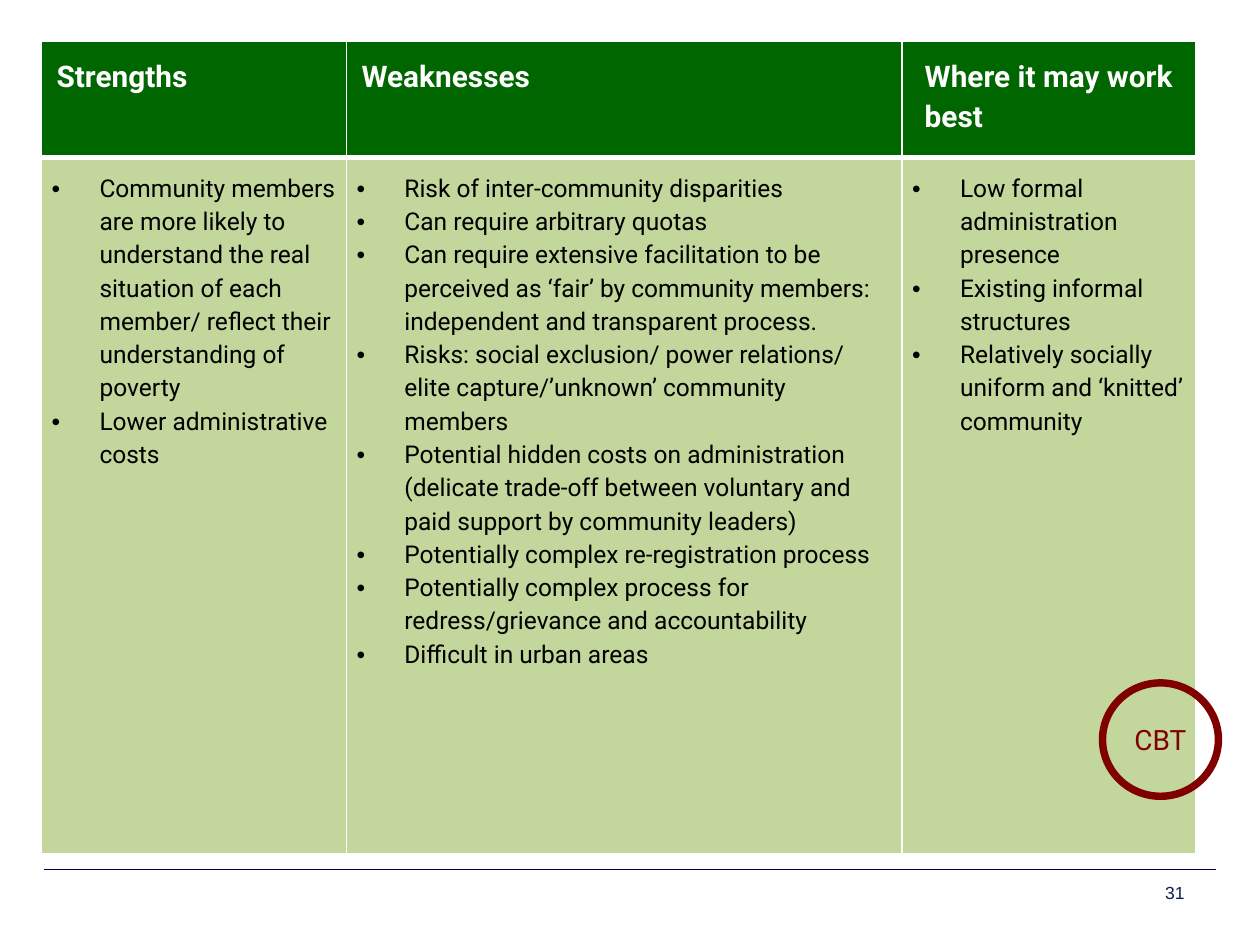
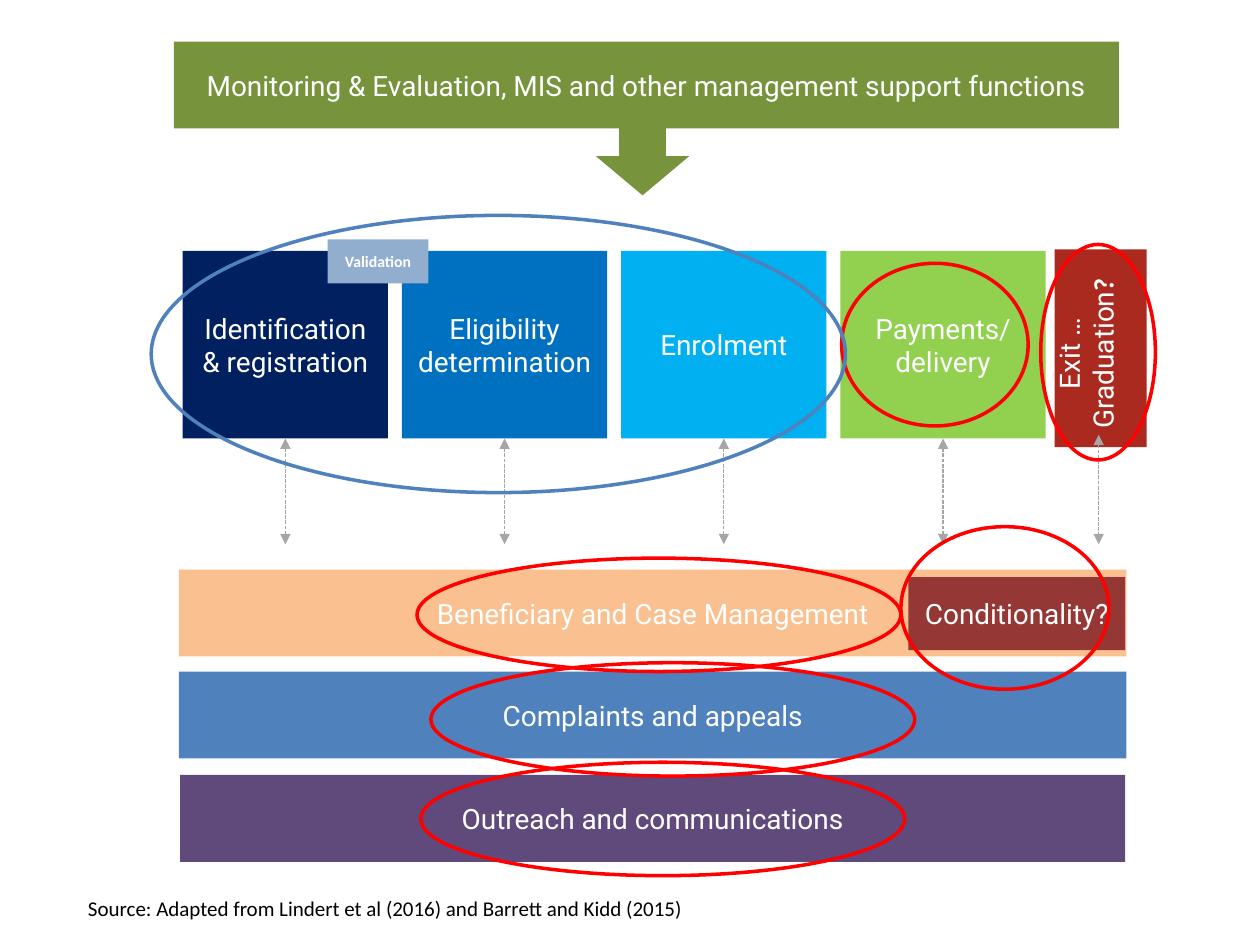
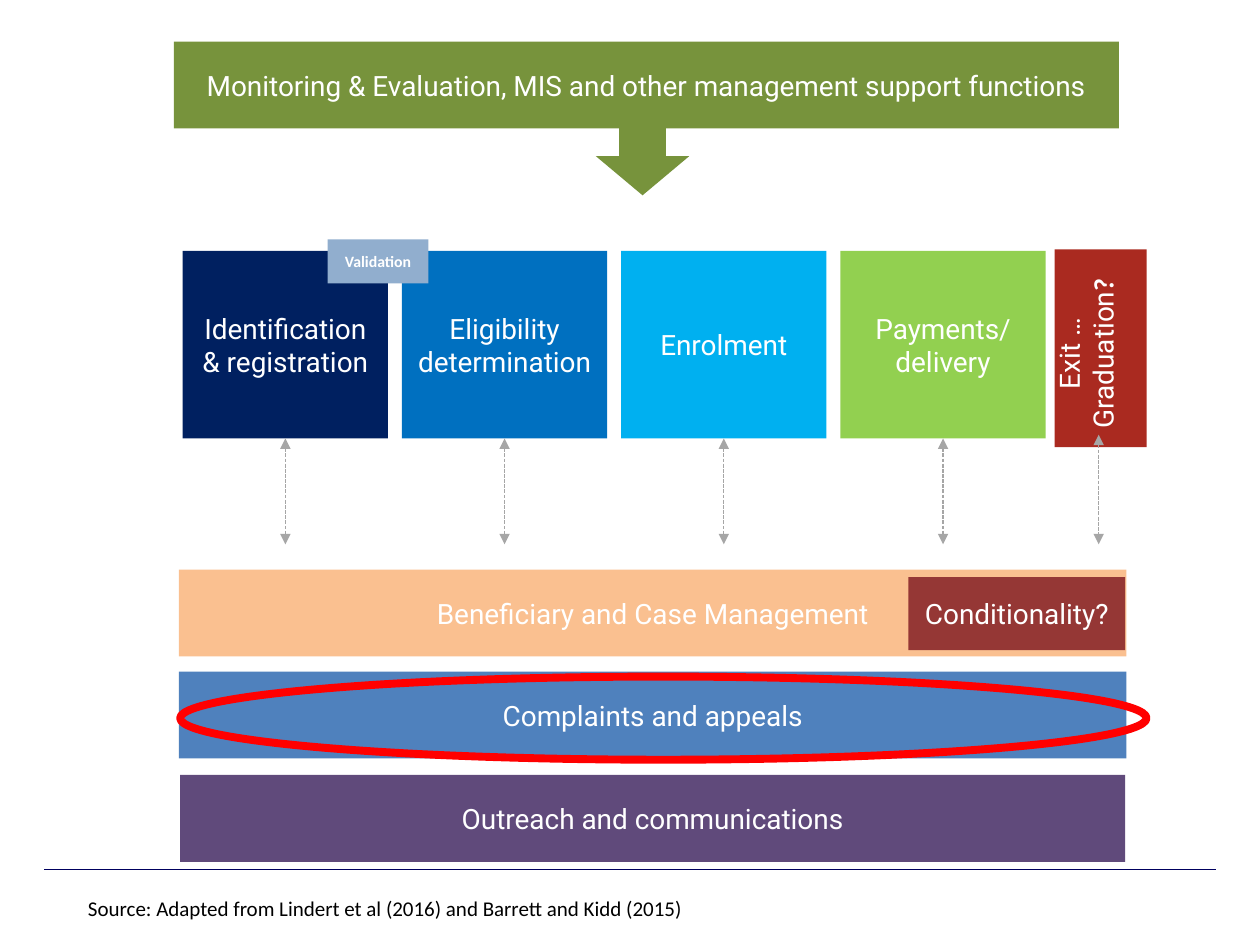
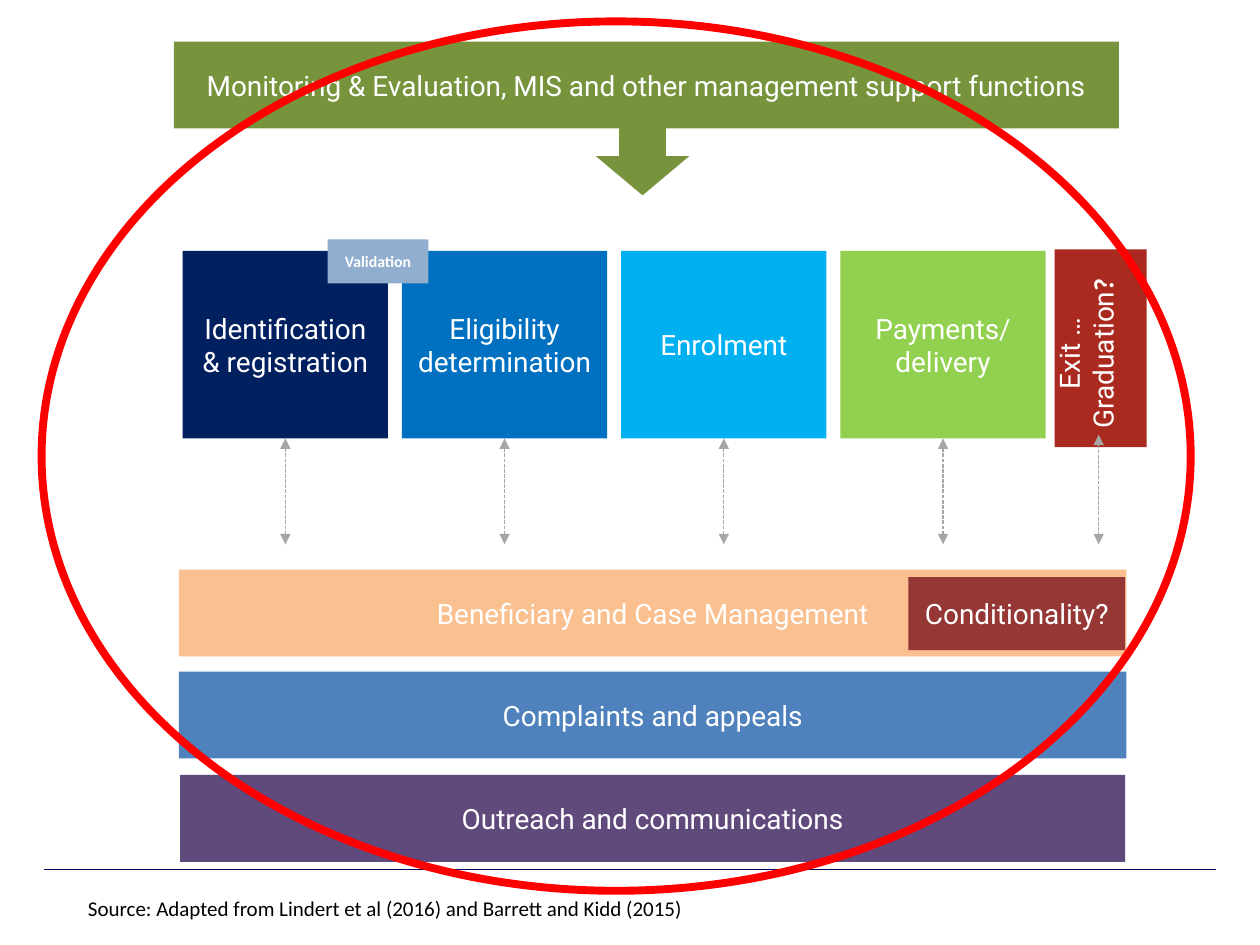
from lxml import etree
from pptx import Presentation
from pptx.dml.color import RGBColor
from pptx.enum.dml import MSO_LINE
from pptx.enum.shapes import MSO_CONNECTOR, MSO_SHAPE
from pptx.enum.text import MSO_ANCHOR, PP_ALIGN
from pptx.oxml.ns import qn
from pptx.util import Inches, Pt

RECTANGLE, ELLIPSE, DOWN_ARROW = MSO_SHAPE.RECTANGLE, MSO_SHAPE.OVAL, MSO_SHAPE.DOWN_ARROW
STRAIGHT = MSO_CONNECTOR.STRAIGHT
SYSTEM_DASH = MSO_LINE.SQUARE_DOT
TOP, MIDDLE = MSO_ANCHOR.TOP, MSO_ANCHOR.MIDDLE
LEFT, CENTER, RIGHT, JUSTIFY = PP_ALIGN.LEFT, PP_ALIGN.CENTER, PP_ALIGN.RIGHT, PP_ALIGN.JUSTIFY
BOTTOM_SIDE = 2

WHITE = RGBColor(0xFF, 0xFF, 0xFF)
BLACK = RGBColor(0x00, 0x00, 0x00)
RED = RGBColor(0xFF, 0x00, 0x00)
MAROON = RGBColor(0x80, 0x00, 0x00)
BRICK = RGBColor(0xAA, 0x2A, 0x20)
RUST = RGBColor(0x95, 0x37, 0x35)
RULE_NAVY = RGBColor(0x00, 0x00, 0x5E)
NUMBER_NAVY = RGBColor(0x0B, 0x1F, 0x51)
NAVY = RGBColor(0x00, 0x20, 0x60)
BLUE = RGBColor(0x00, 0x70, 0xC0)
SKY = RGBColor(0x00, 0xB0, 0xF0)
STEEL = RGBColor(0x4F, 0x81, 0xBD)
PALE_BLUE = RGBColor(0x91, 0xAE, 0xCE)
LIME = RGBColor(0x92, 0xD0, 0x50)
OLIVE = RGBColor(0x77, 0x93, 0x3C)
DARK_GREEN = RGBColor(0x00, 0x66, 0x00)
PALE_GREEN = RGBColor(0xC3, 0xD6, 0x9B)
PEACH = RGBColor(0xFA, 0xC0, 0x90)
PURPLE = RGBColor(0x60, 0x4A, 0x7B)
GREY = RGBColor(0xA6, 0xA6, 0xA6)

BODY_FONT, NOTE_FONT, NUMBER_FONT = "Roboto", "Calibri", "Arial"

# Column: width, header, header alignment, header indent, right and bottom inset, bullets
COLUMNS = [
    (2.42, "Strengths", JUSTIFY, 0, (0.07, 0.03), [
        "Community members are more likely to understand the real situation of each "
        "member/ reflect their understanding of poverty",
        "Lower administrative costs",
    ]),
    (4.41, "Weaknesses", JUSTIFY, 0, (0.07, 0.03), [
        "Risk of inter-community disparities",
        "Can require arbitrary quotas",
        "Can require extensive facilitation to be perceived as ‘fair’ by community "
        "members: independent and transparent process.",
        "Risks: social exclusion/ power relations/ elite capture/’unknown’ community members",
        "Potential hidden costs on administration (delicate trade-off between voluntary "
        "and paid support by community leaders)",
        "Potentially complex re-registration process",
        "Potentially complex process for redress/grievance and accountability",
        "Difficult in urban areas",
    ]),
    (2.33, "Where it may work best", LEFT, 0.06, (0, 0), [
        "Low formal administration presence",
        "Existing informal structures",
        "Relatively socially uniform and ‘knitted’ community",
    ]),
]

STAGES = [
    ("Identification & registration", NAVY),
    ("Eligibility determination", BLUE),
    ("Enrolment", SKY),
    ("Payments/ delivery", LIME),
]
STAGE_LEFT, STAGE_TOP, STAGE_PITCH = 1.45, 1.99, 1.74
STAGE_WIDTH, STAGE_HEIGHT = 1.63, 1.49
ARROW_END = 4.32
BAR_HEIGHT = 0.69
BARS = [
    ("Beneficiary and Case Management", PEACH, 1.42, 4.52, 7.52),
    ("Complaints and appeals", STEEL, 1.42, 5.33, 7.52),
    ("Outreach and communications", PURPLE, 1.43, 6.15, 7.5),
]
HIGHLIGHTS = [
    (6.68, 2.09, 1.48, 1.29),
    (8.26, 1.94, 0.91, 1.71),
    (7.15, 4.18, 1.65, 1.29),
    (3.31, 4.43, 3.84, 0.9),
    (3.42, 5.26, 3.84, 0.9),
    (3.34, 6.05, 3.84, 0.9),
]


class Deck:
    def __init__(self):
        self.presentation = Presentation()
        self.presentation.slide_width = Inches(10)
        self.presentation.slide_height = Inches(7.5)
        self.slide = None

    def new_slide(self, rule=True):
        blank = self.presentation.slide_layouts[6]
        self.slide = self.presentation.slides.add_slide(blank)
        if rule:
            self.line((0.35, 6.9), (9.65, 6.9), RULE_NAVY, 1)

    def style_run(self, run, size, color, font=BODY_FONT, bold=False):
        run.font.size = Pt(size)
        run.font.color.rgb = color
        run.font.name = font
        run.font.bold = bold

    def fill_text(self, frame, text, size, color, font=BODY_FONT, bold=False,
                  align=CENTER, anchor=MIDDLE, wrap=True):
        frame.word_wrap = wrap
        frame.vertical_anchor = anchor
        para = frame.paragraphs[0]
        para.text = text
        para.alignment = align
        for run in para.runs:
            self.style_run(run, size, color, font, bold)
        return para

    def shape(self, kind, place, fill=None, outline=None, weight=1):
        shape = self.slide.shapes.add_shape(kind, *map(Inches, place))
        shape.shadow.inherit = False
        if fill is None:
            shape.fill.background()
        else:
            shape.fill.solid()
            shape.fill.fore_color.rgb = fill
        if outline is None:
            shape.line.fill.background()
        else:
            shape.line.color.rgb = outline
            shape.line.width = Pt(weight)
        return shape

    def box(self, text, place, fill, size=16, font=BODY_FONT, bold=False):
        box = self.shape(RECTANGLE, place, fill)
        para = self.fill_text(box.text_frame, text, size, WHITE, font, bold)
        para.space_after = Pt(12)
        return box

    def ring(self, place, color=RED, weight=2):
        return self.shape(ELLIPSE, place, outline=color, weight=weight)

    def text(self, text, place, size, color, **style):
        box = self.slide.shapes.add_textbox(*map(Inches, place))
        self.fill_text(box.text_frame, text, size, color, **style)
        return box

    def line(self, start, end, color, weight):
        line = self.slide.shapes.add_connector(STRAIGHT, *map(Inches, (*start, *end)))
        line.line.color.rgb = color
        line.line.width = Pt(weight)
        etree.SubElement(line._element.spPr, qn("a:effectLst"))
        return line

    def double_arrow(self, start, end):
        arrow = self.line(start, end, GREY, 0.75)
        arrow.line.dash_style = SYSTEM_DASH
        outline = arrow.line._get_or_add_ln()
        for tag in ("a:headEnd", "a:tailEnd"):
            etree.SubElement(outline, qn(tag), type="triangle")
        return arrow

    def cell(self, cell, fill, insets, bottom_border=1):
        """Set white borders, then the fill and the insets of a table cell."""
        properties = cell._tc.get_or_add_tcPr()
        for tag, weight in (("lnL", 1), ("lnR", 1), ("lnT", 1), ("lnB", bottom_border)):
            border = etree.SubElement(properties, qn(f"a:{tag}"), w=str(Pt(weight)))
            paint = etree.SubElement(border, qn("a:solidFill"))
            etree.SubElement(paint, qn("a:srgbClr"), val=str(WHITE))
        cell.fill.solid()
        cell.fill.fore_color.rgb = fill
        (cell.margin_left, cell.margin_top,
         cell.margin_right, cell.margin_bottom) = map(Inches, insets)

    def bullets(self, frame, items):
        frame.text = "\n".join(items)
        for para in frame.paragraphs:
            properties = para._p.get_or_add_pPr()
            properties.set("marL", str(Inches(0.38)))
            properties.set("indent", str(-Inches(0.38)))
            etree.SubElement(properties, qn("a:buFont"), typeface=NUMBER_FONT)
            etree.SubElement(properties, qn("a:buChar"), char="•")
            para.line_spacing = 1.15
            self.style_run(para.runs[0], 14, BLACK)

    def comparison_table(self, place, columns, row_heights):
        frame = self.slide.shapes.add_table(2, len(columns), *map(Inches, place))
        table = frame.table
        table.horz_banding = False
        for row, height in zip(table.rows, row_heights):
            row.height = Inches(height)
        for index, (width, heading, align, indent, insets, items) in enumerate(columns):
            table.columns[index].width = Inches(width)
            header, body = table.cell(0, index), table.cell(1, index)
            self.cell(header, DARK_GREEN, (0.12, 0.1, *insets), bottom_border=3)
            para = self.fill_text(header.text_frame, heading, 17, WHITE, bold=True,
                                  align=align, anchor=TOP)
            para.line_spacing = 1.15
            para._p.get_or_add_pPr().set("marL", str(Inches(indent)))
            self.cell(body, PALE_GREEN, (0.08, 0.1, *insets))
            self.bullets(body.text_frame, items)

    def delivery_chain(self):
        """Draw the delivery chain diagram with its source line."""
        self.shape(RECTANGLE, (8.37, 1.98, 0.73, 1.57), BRICK)
        self.double_arrow((8.72, 3.45), (8.72, ARROW_END))
        for index, (label, color) in enumerate(STAGES):
            left = STAGE_LEFT + index * STAGE_PITCH
            stage = self.box(label, (left, STAGE_TOP, STAGE_WIDTH, STAGE_HEIGHT), color)
            middle = left + STAGE_WIDTH / 2
            arrow = self.double_arrow((middle, STAGE_TOP + STAGE_HEIGHT), (middle, ARROW_END))
            arrow.begin_connect(stage, BOTTOM_SIDE)
        self.box("Monitoring & Evaluation, MIS and other management support functions",
                 (1.38, 0.33, 7.5, BAR_HEIGHT), OLIVE)
        self.shape(DOWN_ARROW, (4.73, 0.93, 0.74, 0.62), OLIVE)
        for label, color, left, top, width in BARS:
            self.box(label, (left, top, width, BAR_HEIGHT), color)
        exit_label = self.text("Exit …\vGraduation", (8.3, 2.01, 0.8, 1.59), 16, WHITE,
                               anchor=TOP)
        exit_label.text_frame._txBody.bodyPr.set("vert", "vert270")
        question = exit_label.text_frame.paragraphs[0].add_run()
        question.text = "?"
        self.style_run(question, 16, WHITE, NOTE_FONT, bold=True)
        self.box("Conditionality?", (7.21, 4.58, 1.72, 0.58), RUST)
        self.text("Source: Adapted from Lindert et al (2016) and Barrett and Kidd (2015)",
                  (0.6, 7.06, 4.97, 0.3), 12, BLACK, font=NOTE_FONT, align=LEFT, wrap=False)
        self.box("Validation", (2.6, 1.9, 0.8, 0.35), PALE_BLUE, 9, NOTE_FONT, bold=True)


def main():
    deck = Deck()

    deck.new_slide()
    deck.text("31", (7.17, 6.95, 2.33, 0.26), 10, NUMBER_NAVY, font=NUMBER_FONT, align=RIGHT)
    deck.comparison_table((0.33, 0.33, 9.17, 6.45), COLUMNS, (0.92, 5.53))
    badge = deck.ring((8.75, 5.42, 0.92, 0.9), MAROON, 4.25)
    deck.fill_text(badge.text_frame, "CBT", 16, MAROON)

    deck.new_slide(rule=False)
    deck.delivery_chain()
    for place in HIGHLIGHTS:
        deck.ring(place)
    deck.ring((1.2, 1.71, 5.51, 2.2), STEEL)

    for place in ((1.43, 5.37, 7.67, 0.66), (0.33, 0.17, 9.12, 6.9)):
        deck.new_slide()
        deck.delivery_chain()
        deck.ring(place, weight=4.5)

    deck.presentation.save("out.pptx")


if __name__ == "__main__":
    main()
